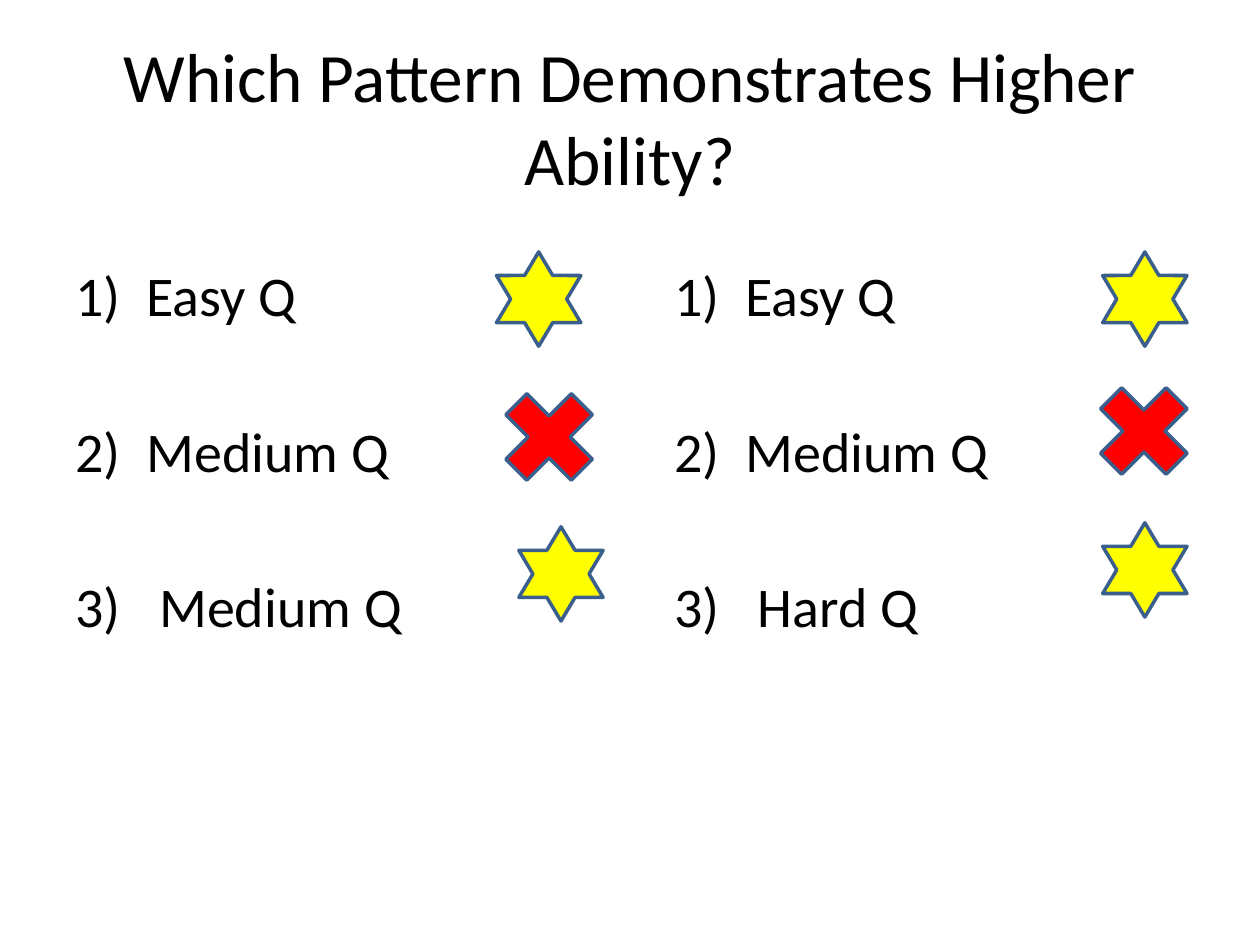
from dataclasses import dataclass

from lxml.etree import SubElement
from pptx import Presentation
from pptx.dml.color import RGBColor
from pptx.enum.shapes import MSO_SHAPE
from pptx.enum.text import MSO_ANCHOR, MSO_AUTO_SIZE, PP_ALIGN
from pptx.oxml.ns import qn
from pptx.util import Cm, Pt


@dataclass(frozen=True)
class Theme:
    font: str = "Calibri"
    ink: str = "000000"
    right: str = "FFFF00"
    wrong: str = "FF0000"
    outline: str = "3A5F8C"
    title_size: float = 39.6
    question_size: float = 32
    question_gap: float = 50.6
    outline_width: float = 2


def write(paragraph, text, *, font, size, color, align, gap=0):
    run = paragraph.add_run()
    run.text = text
    run.font.name = font
    run.font.size = Pt(size)
    run.font.color.rgb = RGBColor.from_string(color)
    paragraph.alignment = align
    paragraph.space_before = Pt(0)
    paragraph.space_after = Pt(gap)


def number(paragraph, indent):
    properties = paragraph._p.get_or_add_pPr()
    properties.set("marL", str(indent))
    properties.set("indent", str(-indent))
    SubElement(properties, qn("a:buFont"), typeface="+mj-lt")
    SubElement(properties, qn("a:buAutoNum"), type="arabicParenR")


class PatternSlide:
    def __init__(self, slide, theme):
        self.slide = slide
        self.theme = theme

    def frame(self, holder, left, top, width, height, anchor):
        holder.left, holder.top = Cm(left), Cm(top)
        holder.width, holder.height = Cm(width), Cm(height)
        holder.text_frame.word_wrap = True
        holder.text_frame.auto_size = MSO_AUTO_SIZE.NONE
        holder.text_frame.vertical_anchor = anchor
        return holder.text_frame

    def title(self, text):
        heading = self.frame(self.slide.shapes.title, 1.27, 0.76, 22.86, 3.18,
                             MSO_ANCHOR.MIDDLE)
        write(heading.paragraphs[0], text, font=self.theme.font,
              size=self.theme.title_size, color=self.theme.ink,
              align=PP_ALIGN.CENTER)

    def questions(self, position, left, texts):
        body = self.frame(self.slide.placeholders[position], left, 5.12, 11, 8.05,
                          MSO_ANCHOR.TOP)
        for index, text in enumerate(texts):
            question = body.add_paragraph() if index else body.paragraphs[0]
            write(question, text, font=self.theme.font,
                  size=self.theme.question_size, color=self.theme.ink,
                  align=PP_ALIGN.LEFT, gap=self.theme.question_gap)
            number(question, Cm(1.43))

    def mark(self, preset, left, top, width, height, color):
        answer = self.slide.shapes.add_shape(
            preset, Cm(left), Cm(top), Cm(width), Cm(height))
        answer.shadow.inherit = False
        answer.fill.solid()
        answer.fill.fore_color.rgb = RGBColor.from_string(color)
        answer.line.color.rgb = RGBColor.from_string(self.theme.outline)
        answer.line.width = Pt(self.theme.outline_width)

    def star(self, left, top):
        self.mark(MSO_SHAPE.STAR_6_POINT, left, top, 1.7, 1.9, self.theme.right)

    def cross(self, left, top):
        self.mark(MSO_SHAPE.MATH_MULTIPLY, left, top, 2.54, 2.54, self.theme.wrong)


def main():
    deck = Presentation()
    deck.slide_width, deck.slide_height = Cm(25.4), Cm(19.05)
    two_content = deck.slide_layouts[3]
    pattern = PatternSlide(deck.slides.add_slide(two_content), Theme())

    pattern.title("Which Pattern Demonstrates Higher Ability?")
    pattern.questions(1, 1.27, ["Easy Q", "Medium Q", " Medium Q"])
    pattern.questions(2, 13.34, ["Easy Q", "Medium Q", " Hard Q"])

    for left, top in [(10.01, 5.08), (10.46, 10.62), (22.23, 5.08), (22.23, 10.54)]:
        pattern.star(left, top)
    for left, top in [(9.8, 7.54), (21.79, 7.42)]:
        pattern.cross(left, top)

    deck.save("out.pptx")


if __name__ == "__main__":
    main()
